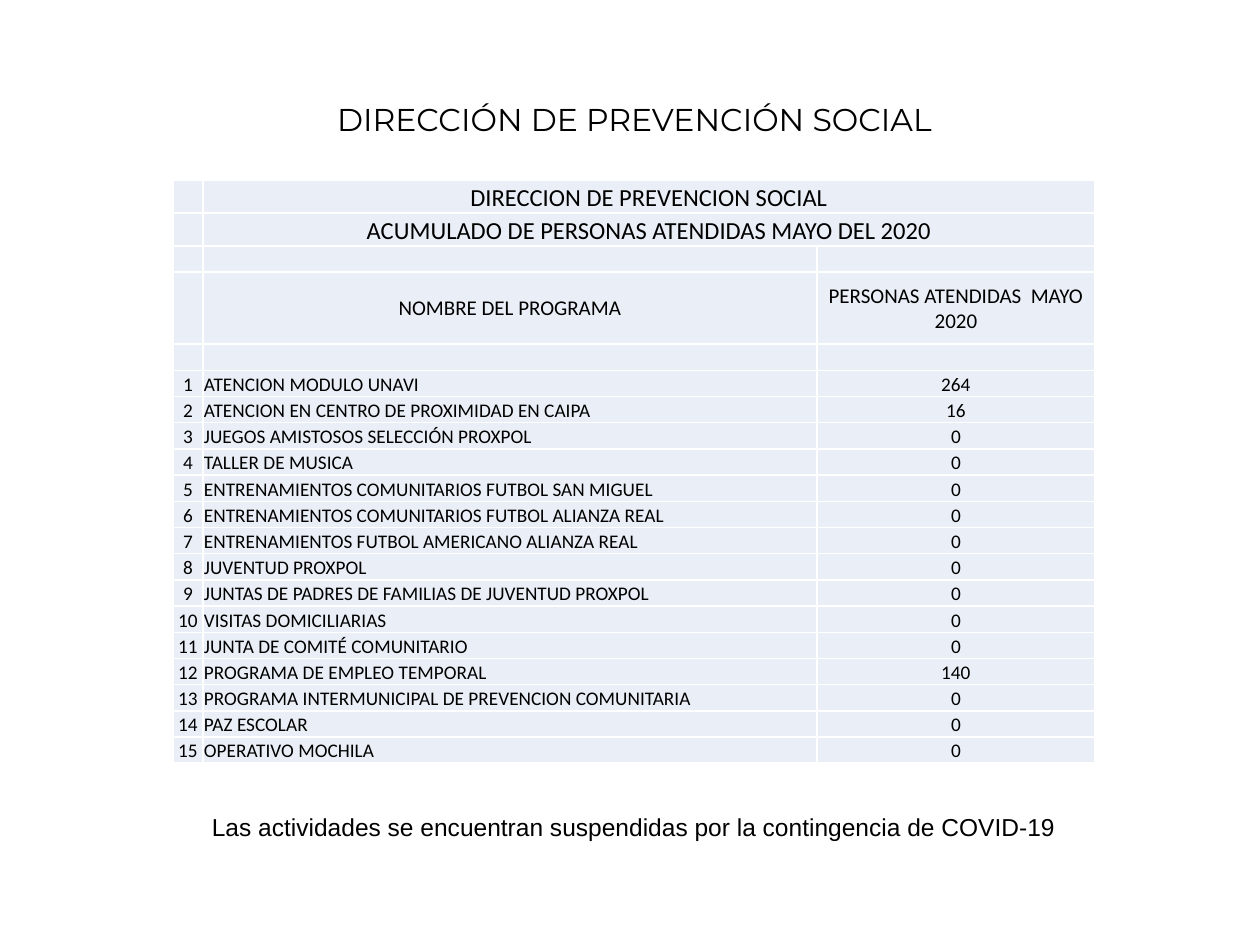
from pptx import Presentation
from pptx.dml.color import RGBColor
from pptx.enum.text import MSO_ANCHOR, MSO_AUTO_SIZE, PP_ALIGN
from pptx.oxml.ns import qn
from pptx.util import Emu, Pt
from lxml import etree

LEFT, CENTER = PP_ALIGN.LEFT, PP_ALIGN.CENTER
MIDDLE, BOTTOM = MSO_ANCHOR.MIDDLE, MSO_ANCHOR.BOTTOM
NO_AUTOFIT = MSO_AUTO_SIZE.NONE

BLACK = RGBColor(0x00, 0x00, 0x00)
WHITE = RGBColor(0xFF, 0xFF, 0xFF)
PALE_BLUE = RGBColor(0xEA, 0xEF, 0xF7)

TITLE_ONLY = 5
COLUMN_WIDTHS = (30, 614, 278)
TABLE_LEFT, TABLE_TOP, TABLE_HEIGHT = 173, 180, 584
TALL_ROWS = {0: 33, 1: 33, 3: 72}

HEADINGS = (
    ("", "DIRECCION DE PREVENCION SOCIAL", ""),
    ("", "ACUMULADO DE PERSONAS ATENDIDAS MAYO DEL 2020", ""),
    ("", "", ""),
    ("", "NOMBRE DEL PROGRAMA", "PERSONAS ATENDIDAS  MAYO 2020"),
    ("", "", ""),
)
BANNER_ROWS = (0, 1)
HEADER_ROW = 3

PROGRAMS = (
    ("ATENCION MODULO UNAVI", 264),
    ("ATENCION EN CENTRO DE PROXIMIDAD EN CAIPA", 16),
    ("JUEGOS AMISTOSOS SELECCIÓN PROXPOL", 0),
    ("TALLER DE MUSICA", 0),
    ("ENTRENAMIENTOS COMUNITARIOS FUTBOL SAN MIGUEL", 0),
    ("ENTRENAMIENTOS COMUNITARIOS FUTBOL ALIANZA REAL", 0),
    ("ENTRENAMIENTOS FUTBOL AMERICANO ALIANZA REAL", 0),
    ("JUVENTUD PROXPOL", 0),
    ("JUNTAS DE PADRES DE FAMILIAS DE JUVENTUD PROXPOL", 0),
    ("VISITAS DOMICILIARIAS", 0),
    ("JUNTA DE COMITÉ COMUNITARIO", 0),
    ("PROGRAMA DE EMPLEO TEMPORAL", 140),
    ("PROGRAMA INTERMUNICIPAL DE PREVENCION COMUNITARIA", 0),
    ("PAZ ESCOLAR", 0),
    ("OPERATIVO MOCHILA", 0),
)


def px(length):
    return Emu(round(length * 914400 / 126))


def format_runs(paragraph, font_name, size, align):
    paragraph.alignment = align
    for run in paragraph.runs:
        run.font.name = font_name
        run.font.size = Pt(size)
        run.font.color.rgb = BLACK


def write_line(shape, text, font_name, size):
    """Fill a shape with one centred line of text."""
    frame = shape.text_frame
    frame.text = text
    frame.word_wrap = True
    frame.auto_size = NO_AUTOFIT
    frame.vertical_anchor = MIDDLE
    format_runs(frame.paragraphs[0], font_name, size, CENTER)


def add_title(slide, text):
    title = slide.shapes.title
    title.left, title.top, title.width, title.height = map(px, (203, 94, 863, 50))
    write_line(title, text, "Montserrat", 18)


def add_note(slide, text):
    note = slide.shapes.add_textbox(*map(px, (173, 805, 922, 43)))
    write_line(note, text, "Arial", 14)


def set_borders(cell):
    properties = cell._tc.get_or_add_tcPr()
    for side in ("lnL", "lnR", "lnT", "lnB"):
        line = etree.SubElement(properties, qn(f"a:{side}"), w=str(Pt(1)))
        fill = etree.SubElement(line, qn("a:solidFill"))
        etree.SubElement(fill, qn("a:srgbClr"), val=str(WHITE))


def format_cell(cell, text, size, align, anchor):
    set_borders(cell)
    cell.fill.solid()
    cell.fill.fore_color.rgb = PALE_BLUE
    cell.margin_left = cell.margin_right = cell.margin_top = px(1)
    cell.margin_bottom = 0
    cell.vertical_anchor = anchor
    cell.text = text
    paragraph = cell.text_frame.paragraphs[0]
    format_runs(paragraph, "Calibri", size, align)
    if not text:
        # Keeps an empty cell from stretching its row
        etree.SubElement(paragraph._p, qn("a:endParaRPr"), sz=str(size * 100))


def add_program_table(slide):
    programs = [(str(number), name, str(people))
                for number, (name, people) in enumerate(PROGRAMS, start=1)]
    rows = [*HEADINGS, *programs]
    frame = slide.shapes.add_table(
        len(rows), len(COLUMN_WIDTHS), px(TABLE_LEFT), px(TABLE_TOP),
        px(sum(COLUMN_WIDTHS)), px(TABLE_HEIGHT))
    table = frame.table
    table.first_row = table.horz_banding = False

    # Rows without a height of their own share the rest equally
    plain_height = (TABLE_HEIGHT - sum(TALL_ROWS.values())) / (len(rows) - len(TALL_ROWS))
    for column, width in zip(table.columns, COLUMN_WIDTHS):
        column.width = px(width)
    for index, row in enumerate(table.rows):
        row.height = px(TALL_ROWS.get(index, plain_height))

    for r, texts in enumerate(rows):
        size = 14 if r in BANNER_ROWS else 12 if r == HEADER_ROW else 11
        anchor = MIDDLE if r == HEADER_ROW else BOTTOM
        for c, text in enumerate(texts):
            is_program_name = c == 1 and r >= len(HEADINGS)
            format_cell(table.cell(r, c), text, size,
                        LEFT if is_program_name else CENTER, anchor)
    for r in BANNER_ROWS:
        table.cell(r, 1).merge(table.cell(r, 2))


def main():
    presentation = Presentation()
    presentation.slide_width, presentation.slide_height = px(1260), px(945)
    slide = presentation.slides.add_slide(presentation.slide_layouts[TITLE_ONLY])

    add_title(slide, "DIRECCIÓN DE PREVENCIÓN SOCIAL")
    add_program_table(slide)
    add_note(slide, "Las actividades se encuentran suspendidas por la contingencia de COVID-19")

    presentation.save("out.pptx")


if __name__ == "__main__":
    main()
